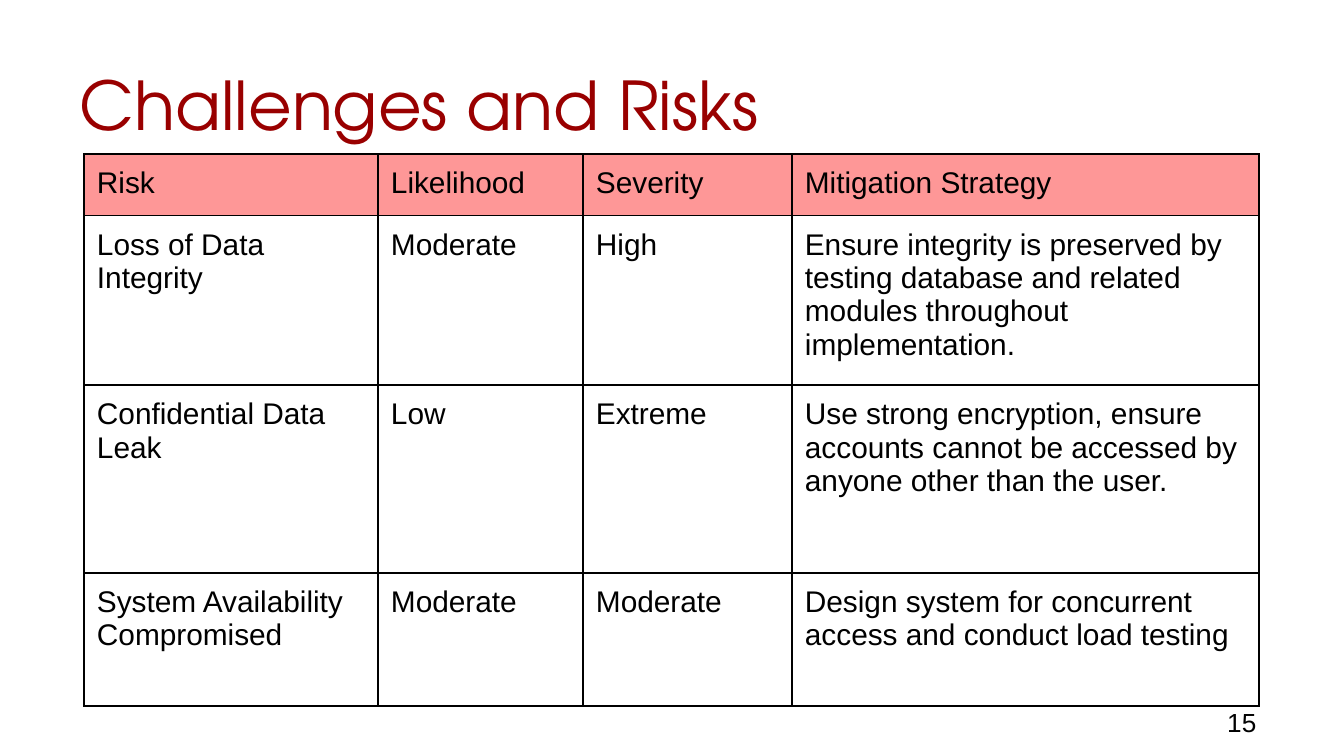
import pptx
import pptx.dml.color
import pptx.enum.text
import pptx.oxml
import pptx.oxml.ns
import pptx.util

PX = 914400 / 134.4
THEME = {
    "title": ("TeX Gyre Adventor", 36, "990000"),
    "cell": ("Arial", 16, "000000"),
    "number": ("Arial", 14, "000000"),
    "header_fill": "FE9797",
    "border": "000000",
}
INSET = 13


def px(length):
    return pptx.util.Emu(round(length * PX))


def write(frame, text, style):
    family, size, color = THEME[style]
    frame.word_wrap = True
    paragraph = frame.paragraphs[0]
    paragraph.text = text
    paragraph.font.name = family
    paragraph.font.size = pptx.util.Pt(size)
    paragraph.font.color.rgb = pptx.dml.color.RGBColor.from_string(color)


deck = pptx.Presentation()
deck.slide_width, deck.slide_height = px(1344), px(756)
slide = deck.slides.add_slide(deck.slide_layouts[6])

title = slide.shapes.add_textbox(px(67), px(31), px(1210), px(126)).text_frame
title.vertical_anchor = pptx.enum.text.MSO_ANCHOR.BOTTOM
title.margin_top = title.margin_bottom = px(INSET)
title.margin_left = title.margin_right = px(INSET)
write(title, "Challenges and Risks", "title")

risks = [
    ("Risk", "Likelihood", "Severity", "Mitigation Strategy"),
    ("Loss of Data Integrity", "Moderate", "High",
     "Ensure integrity is preserved by testing database and related modules "
     "throughout implementation."),
    ("Confidential Data Leak", "Low", "Extreme",
     "Use strong encryption, ensure accounts cannot be accessed by anyone "
     "other than the user."),
    ("System Availability Compromised", "Moderate", "Moderate",
     "Design system for concurrent access and conduct load testing"),
]
column_widths = [294, 205, 209, 467]
row_heights = [61, 165, 188, 133]

risk_table = slide.shapes.add_table(
    len(row_heights), len(column_widths), px(84), px(154),
    px(sum(column_widths)), px(sum(row_heights))).table
risk_table.first_row = risk_table.horz_banding = False
for column, width in zip(risk_table.columns, column_widths):
    column.width = px(width)
for row, height in zip(risk_table.rows, row_heights):
    row.height = px(height)

for row_index, entries in enumerate(risks):
    for column_index, entry in enumerate(entries):
        cell = risk_table.cell(row_index, column_index)
        cell.margin_left = cell.margin_right = px(INSET)
        cell.margin_top = cell.margin_bottom = px(INSET)
        write(cell.text_frame, entry, "cell")
        if row_index == 0:
            cell.fill.solid()
            cell.fill.fore_color.rgb = pptx.dml.color.RGBColor.from_string(
                THEME["header_fill"])
        else:
            cell.fill.background()
        properties = cell._tc.get_or_add_tcPr()
        for position, side in enumerate(("lnL", "lnR", "lnT", "lnB")):
            properties.insert(position, pptx.oxml.parse_xml(
                f'<a:{side} {pptx.oxml.ns.nsdecls("a")} w="{pptx.util.Pt(0.75)}">'
                f'<a:solidFill><a:srgbClr val="{THEME["border"]}"/></a:solidFill>'
                f'</a:{side}>'))

page_number = slide.shapes.add_textbox(px(1214), px(700), px(101), px(40))
write(page_number.text_frame, "15", "number")

deck.save("out.pptx")
